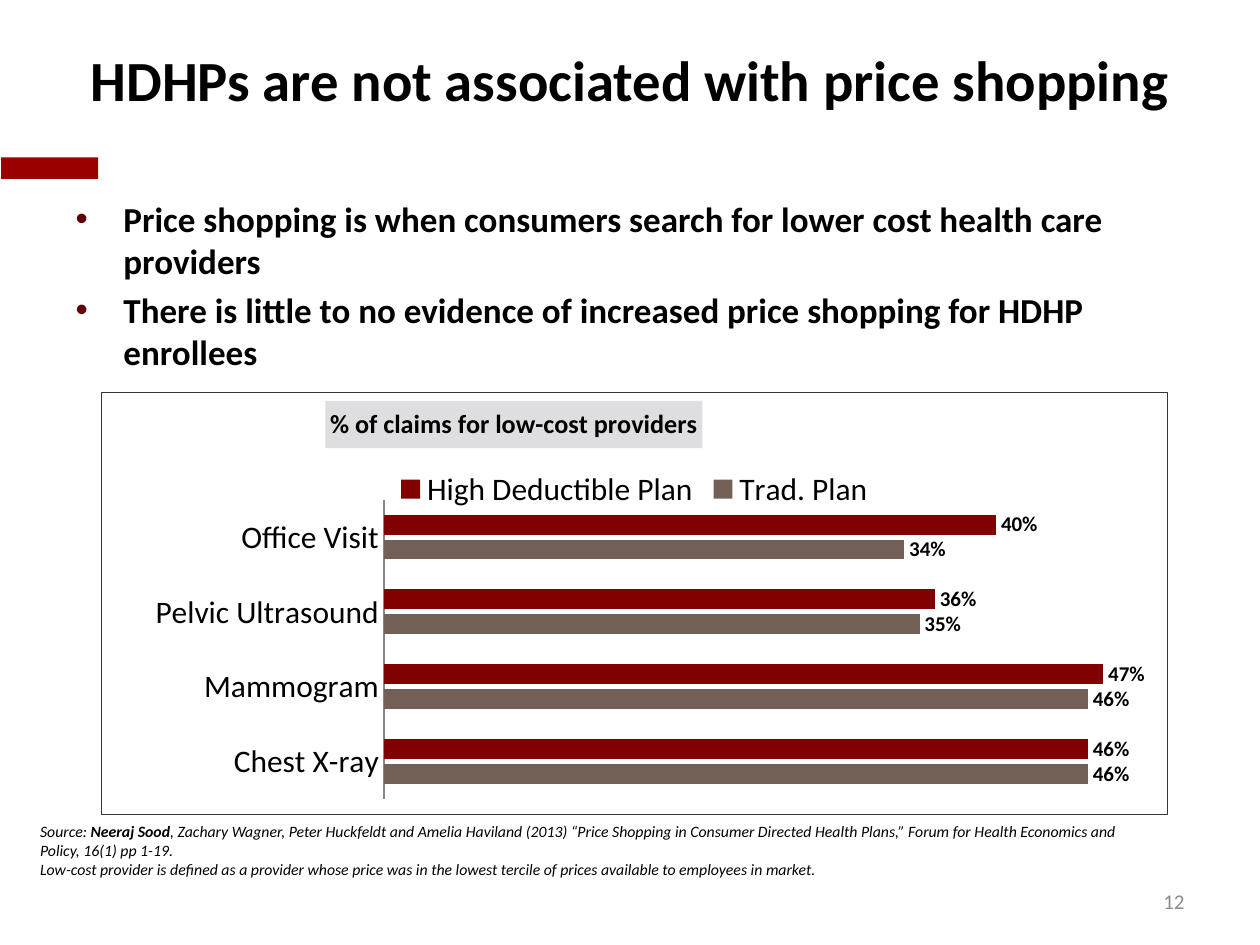
from dataclasses import dataclass

from lxml import etree
from pptx import Presentation
from pptx import util as u
from pptx.chart.data import CategoryChartData
from pptx.dml.color import RGBColor
from pptx.enum import chart as charts, shapes, text
from pptx.oxml import ns, parse_xml

FONT = "Calibri"
BLACK = RGBColor(0x00, 0x00, 0x00)
GRAY = RGBColor(0x8C, 0x8C, 0x8C)
AXIS_GRAY = RGBColor(0x87, 0x87, 0x87)
ACCENT_RED = RGBColor(0x99, 0x00, 0x00)
BULLET_RED = RGBColor(0x61, 0x00, 0x00)
HDHP_RED = RGBColor(0x81, 0x00, 0x00)
TRAD_BROWN = RGBColor(0x72, 0x60, 0x56)
TITLE_FILL = RGBColor(0xDE, 0xDE, 0xE0)
BORDER = RGBColor(0x36, 0x36, 0x39)


@dataclass(frozen=True)
class Frame:
    left: float
    top: float
    width: float
    height: float

    def lengths(self) -> tuple:
        return tuple(u.Inches(v) for v in (self.left, self.top, self.width, self.height))


@dataclass(frozen=True)
class Span:
    words: str
    bold: bool = False


@dataclass(frozen=True)
class Plan:
    name: str
    values: tuple
    color: RGBColor


PROCEDURES = ("Chest X-ray", "Mammogram", "Pelvic Ultrasound", "Office Visit")
PLANS = (
    Plan("Trad. Plan", (0.46, 0.46, 0.35, 0.34), TRAD_BROWN),
    Plan("High Deductible Plan", (0.46, 0.47, 0.36, 0.40), HDHP_RED),
)
BULLETS = (
    "Price shopping is when consumers search for lower cost health care providers",
    "There is little to no evidence of increased price shopping for HDHP enrollees",
)
SOURCE = (
    (
        Span("Source: "),
        Span("Neeraj Sood", bold=True),
        Span(
            ", Zachary Wagner, Peter Huckfeldt and Amelia Haviland (2013) “Price Shopping in "
            "Consumer Directed Health Plans,” Forum for Health Economics and Policy, 16(1) pp 1-19."
        ),
    ),
    (
        Span(
            "Low-cost provider is defined as a provider whose price was in the lowest tercile "
            "of prices available to employees in market."
        ),
    ),
)


def style(font, size: float, color: RGBColor = BLACK, bold: bool = False, italic: bool = False) -> None:
    font.name = FONT
    font.size = u.Pt(size)
    font.color.rgb = color
    font.bold = bold
    font.italic = italic


def add_span(para, words: str, size: float, **look) -> None:
    span = para.add_run()
    span.text = words
    style(span.font, size, **look)


def place(box, frame: Frame) -> None:
    box.left, box.top, box.width, box.height = frame.lengths()


def next_para(text_frame, index: int):
    return text_frame.paragraphs[0] if index == 0 else text_frame.add_paragraph()


def add_bullet(para, indent: float) -> None:
    props = para._p.get_or_add_pPr()
    props.set("marL", str(u.Inches(indent)))
    props.set("indent", str(-u.Inches(indent)))
    color = etree.SubElement(props, ns.qn("a:buClr"))
    etree.SubElement(color, ns.qn("a:srgbClr")).set("val", str(BULLET_RED))
    etree.SubElement(props, ns.qn("a:buFont")).set("typeface", "Arial")
    etree.SubElement(props, ns.qn("a:buChar")).set("char", "•")


def set_layout(parent, index: int, **settings) -> None:
    for old in parent.findall(ns.qn("c:layout")):
        parent.remove(old)
    layout = etree.Element(ns.qn("c:layout"))
    manual = etree.SubElement(layout, ns.qn("c:manualLayout"))
    for tag, value in settings.items():
        etree.SubElement(manual, ns.qn(f"c:{tag}")).set("val", str(value))
    parent.insert(index, layout)


def add_border(chart, color: RGBColor, width: float) -> None:
    border = parse_xml(
        f'<c:spPr {ns.nsdecls("c", "a")}><a:noFill/><a:ln w="{u.Pt(width)}">'
        f'<a:solidFill><a:srgbClr val="{color}"/></a:solidFill></a:ln></c:spPr>'
    )
    chart._chartSpace.find(ns.qn("c:txPr")).addprevious(border)


def add_claims_chart(page, frame: Frame) -> None:
    data = CategoryChartData(number_format="0%")
    data.categories = PROCEDURES
    for plan in PLANS:
        data.add_series(plan.name, plan.values)
    chart = page.shapes.add_chart(
        charts.XL_CHART_TYPE.BAR_CLUSTERED, *frame.lengths(), data
    ).chart
    style(chart.font, 18)
    add_border(chart, BORDER, 0.75)

    title = chart.chart_title
    add_span(title.text_frame.paragraphs[0], "% of claims for low-cost providers", 15, bold=True)
    title.format.fill.solid()
    title.format.fill.fore_color.rgb = TITLE_FILL
    title.include_in_layout = False if hasattr(title, "include_in_layout") else None
    set_layout(title._element, 1, xMode="edge", yMode="edge", x=0.21, y=0.02)

    chart.has_legend = True
    chart.legend.position = charts.XL_LEGEND_POSITION.TOP
    chart.legend.include_in_layout = False

    categories = chart.category_axis
    categories.major_tick_mark = charts.XL_TICK_MARK.NONE
    categories.has_major_gridlines = False
    categories.format.line.color.rgb = AXIS_GRAY
    amounts = chart.value_axis
    amounts.visible = False
    amounts.has_major_gridlines = False
    amounts.minimum_scale = 0
    amounts.maximum_scale = 0.5

    plot = chart.plots[0]
    plot.gap_width = 150
    plot.overlap = -25
    plot.vary_by_categories = False
    for series, plan in zip(plot.series, PLANS):
        series.format.fill.solid()
        series.format.fill.fore_color.rgb = plan.color
        labels = series.data_labels
        labels.show_value = True
        labels.number_format = "0%"
        labels.number_format_is_linked = False
        labels.position = charts.XL_LABEL_POSITION.OUTSIDE_END
        style(labels.font, 12, bold=True)
    area = chart._chartSpace.find(".//" + ns.qn("c:plotArea"))
    set_layout(
        area, 0, layoutTarget="inner", xMode="edge", yMode="edge", x=0.265, y=0.254, w=0.718, h=0.71
    )


def add_text_box(page, frame: Frame):
    box = page.shapes.add_textbox(*frame.lengths())
    box.text_frame.word_wrap = True
    return box.text_frame


def main() -> None:
    deck = Presentation()
    deck.slide_width, deck.slide_height = u.Inches(10), u.Inches(7.5)
    page = deck.slides.add_slide(deck.slide_layouts[1])

    title, body = page.placeholders
    place(title, Frame(0, 0, 10, 1.25))
    title.text_frame.vertical_anchor = text.MSO_ANCHOR.MIDDLE
    heading = title.text_frame.paragraphs[0]
    heading.alignment = text.PP_ALIGN.CENTER
    add_span(heading, "HDHPs are not associated with price shopping", 32.4, bold=True)

    place(body, Frame(0.5, 1.52, 9, 4.95))
    for index, words in enumerate(BULLETS):
        para = next_para(body.text_frame, index)
        add_bullet(para, 0.38)
        para.space_before = u.Pt(4 if index else 0)
        add_span(para, words, 20, bold=True)

    accent = page.shapes.add_shape(
        shapes.MSO_SHAPE.RECTANGLE, *Frame(0.01, 1.25, 0.77, 0.17).lengths()
    )
    accent.shadow.inherit = False
    accent.fill.solid()
    accent.fill.fore_color.rgb = ACCENT_RED
    accent.line.fill.background()

    add_claims_chart(page, Frame(0.8, 3.11, 8.47, 3.36))

    source = add_text_box(page, Frame(0.22, 6.47, 8.75, 0.56))
    for index, spans in enumerate(SOURCE):
        para = next_para(source, index)
        for span in spans:
            add_span(para, span.words, 9, bold=span.bold, italic=True)

    number = add_text_box(page, Frame(7.17, 6.95, 2.33, 0.4))
    number.vertical_anchor = text.MSO_ANCHOR.MIDDLE
    number.paragraphs[0].alignment = text.PP_ALIGN.RIGHT
    add_span(number.paragraphs[0], "12", 12, color=GRAY)

    deck.save("out.pptx")


if __name__ == "__main__":
    main()
